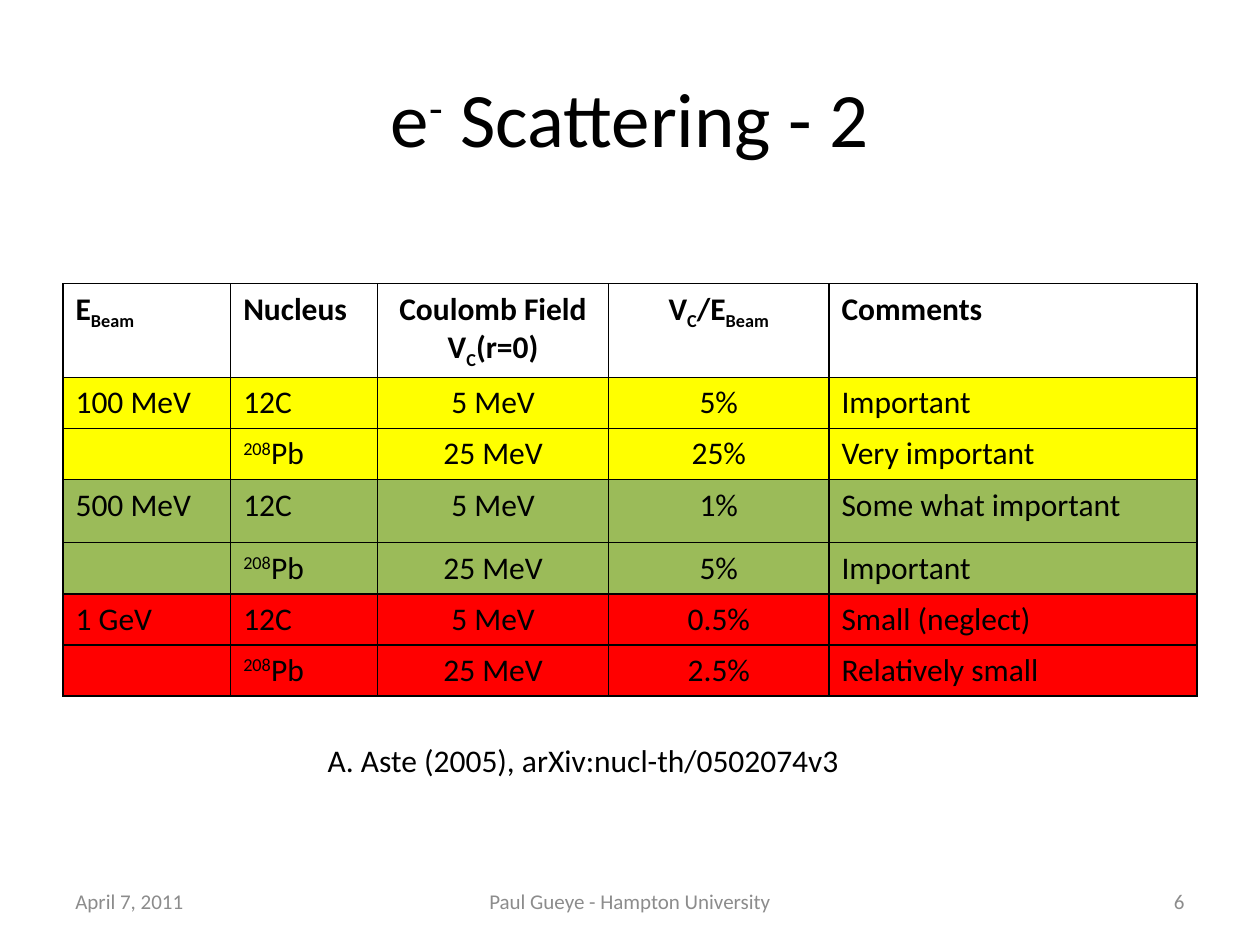
from dataclasses import dataclass
from typing import NamedTuple

import lxml.etree
import pptx
import pptx.dml.color
import pptx.enum.text
import pptx.oxml.ns
import pptx.util

Cm = pptx.util.Cm
Pt = pptx.util.Pt
ALIGN = pptx.enum.text.PP_ALIGN
ANCHOR = pptx.enum.text.MSO_ANCHOR


@dataclass(frozen=True)
class Theme:
    font: str = "Calibri"
    ink: str = "000000"
    muted: str = "8C8C8C"
    yellow: str = "FFFF00"
    green: str = "9BBB59"
    red: str = "FF0000"
    title_size: int = 44
    body_size: int = 18
    footer_size: int = 12
    border_width: int = 1


THEME = Theme()


class Piece(NamedTuple):
    """A stretch of text; baseline is the raise (+) or drop (-) in percent."""
    text: str
    baseline: int = 0


Line = list[Piece]


@dataclass(frozen=True)
class Label:
    left: float
    top: float
    width: float
    height: float
    line: Line
    size: int
    align: ALIGN
    color: str = THEME.ink
    anchor: ANCHOR = ANCHOR.MIDDLE


@dataclass(frozen=True)
class EnergyGroup:
    """Two rows of the table: carbon, then lead."""
    energy: str
    fill: str
    ratios: tuple[str, str]
    comments: tuple[str, str]


def rgb(color: str) -> pptx.dml.color.RGBColor:
    return pptx.dml.color.RGBColor.from_string(color)


def write_lines(text_frame, lines: list[Line], size: int, align: ALIGN,
                color: str = THEME.ink, bold: bool = False) -> None:
    for number, line in enumerate(lines):
        paragraph = text_frame.add_paragraph() if number else text_frame.paragraphs[0]
        paragraph.alignment = align
        for piece in line:
            run = paragraph.add_run()
            run.text = piece.text
            run.font.name = THEME.font
            run.font.size = Pt(size)
            run.font.bold = bold
            run.font.color.rgb = rgb(color)
            if piece.baseline:
                run.font._element.set("baseline", str(piece.baseline * 1000))


def draw_label(slide, label: Label) -> None:
    shape = slide.shapes.add_textbox(
        Cm(label.left), Cm(label.top), Cm(label.width), Cm(label.height))
    shape.text_frame.word_wrap = True
    shape.text_frame.vertical_anchor = label.anchor
    write_lines(shape.text_frame, [label.line], label.size, label.align, label.color)


def draw_borders(cell) -> None:
    properties = cell._tc.get_or_add_tcPr()
    for position, side in enumerate(("lnL", "lnR", "lnT", "lnB")):
        border = lxml.etree.Element(
            pptx.oxml.ns.qn(f"a:{side}"), w=str(Pt(THEME.border_width)))
        fill = lxml.etree.SubElement(border, pptx.oxml.ns.qn("a:solidFill"))
        lxml.etree.SubElement(fill, pptx.oxml.ns.qn("a:srgbClr"), val=THEME.ink)
        properties.insert(position, border)


def draw_cell(cell, lines: list[Line], align: ALIGN, fill: str | None) -> None:
    if fill:
        cell.fill.solid()
        cell.fill.fore_color.rgb = rgb(fill)
    else:
        cell.fill.background()
    write_lines(cell.text_frame, lines, THEME.body_size, align, bold=fill is None)
    draw_borders(cell)


# Table content
V_C = [Piece("V"), Piece("C", -25)]
BEAM = Piece("Beam", -25)
HEADER = [
    [[Piece("E"), BEAM]],
    [[Piece("Nucleus")]],
    [[Piece("Coulomb Field")], V_C + [Piece("(r=0)")]],
    [V_C + [Piece("/E"), BEAM]],
    [[Piece("Comments")]],
]
NUCLEI = [
    ([Piece("12C")], "5 MeV"),
    ([Piece("208", 30), Piece("Pb")], "25 MeV"),
]
GROUPS = [
    EnergyGroup("100 MeV", THEME.yellow, ("5%", "25%"), ("Important", "Very important")),
    EnergyGroup("500 MeV", THEME.green, ("1%", "5%"), ("Some what important", "Important")),
    EnergyGroup("1 GeV", THEME.red, ("0.5%", "2.5%"), ("Small (neglect)", "Relatively small")),
]
COLUMN_WIDTHS = [3.38, 2.96, 4.66, 4.44, 7.42]
COLUMN_ALIGNS = [ALIGN.LEFT, ALIGN.LEFT, ALIGN.CENTER, ALIGN.CENTER, ALIGN.LEFT]
ROW_HEIGHTS = [1.68, 0.91, 0.91, 1.27, 0.91, 0.91, 0.91]

# Text around the table
FOOTER_TOP, FOOTER_HEIGHT = 17.65, 1.02
LABELS = [
    Label(1.27, 0.76, 22.86, 3.18,
          [Piece("e"), Piece("-", 30), Piece(" Scattering - 2")],
          THEME.title_size, ALIGN.CENTER),
    Label(5.51, 14.81, 12.5, 1.02,
          [Piece("A. Aste (2005), arXiv:nucl-th/0502074v3")],
          THEME.body_size, ALIGN.CENTER, anchor=ANCHOR.TOP),
] + [
    Label(left, FOOTER_TOP, width, FOOTER_HEIGHT, [Piece(text)],
          THEME.footer_size, align, THEME.muted)
    for left, width, text, align in (
        (1.27, 5.92, "April 7, 2011", ALIGN.LEFT),
        (8.68, 8.04, "Paul Gueye - Hampton University", ALIGN.CENTER),
        (18.21, 5.92, "6", ALIGN.RIGHT),
    )
]


def draw_table(slide) -> None:
    # Rows as (cells, fill)
    rows = [(HEADER, None)]
    for group in GROUPS:
        for number, (nucleus, field) in enumerate(NUCLEI):
            energy = [] if number else [[Piece(group.energy)]]
            rows.append(([energy, [nucleus], [[Piece(field)]],
                          [[Piece(group.ratios[number])]],
                          [[Piece(group.comments[number])]]], group.fill))

    frame = slide.shapes.add_table(
        len(rows), len(COLUMN_WIDTHS), Cm(1.27), Cm(5.72), Cm(22.86), Cm(8.13))
    table = frame.table
    table.first_row = False
    table.horz_banding = False
    for column, width in zip(table.columns, COLUMN_WIDTHS):
        column.width = Cm(width)
    for row, height in zip(table.rows, ROW_HEIGHTS):
        row.height = Cm(height)
    frame.height = Cm(8.13)
    for row, (contents, fill) in zip(table.rows, rows):
        for cell, lines, align in zip(row.cells, contents, COLUMN_ALIGNS):
            draw_cell(cell, lines, align, fill)


def main() -> None:
    presentation = pptx.Presentation()
    presentation.slide_width = Cm(25.4)
    presentation.slide_height = Cm(19.05)
    slide = presentation.slides.add_slide(presentation.slide_layouts[6])
    draw_table(slide)
    for label in LABELS:
        draw_label(slide, label)
    presentation.save("out.pptx")


if __name__ == "__main__":
    main()
